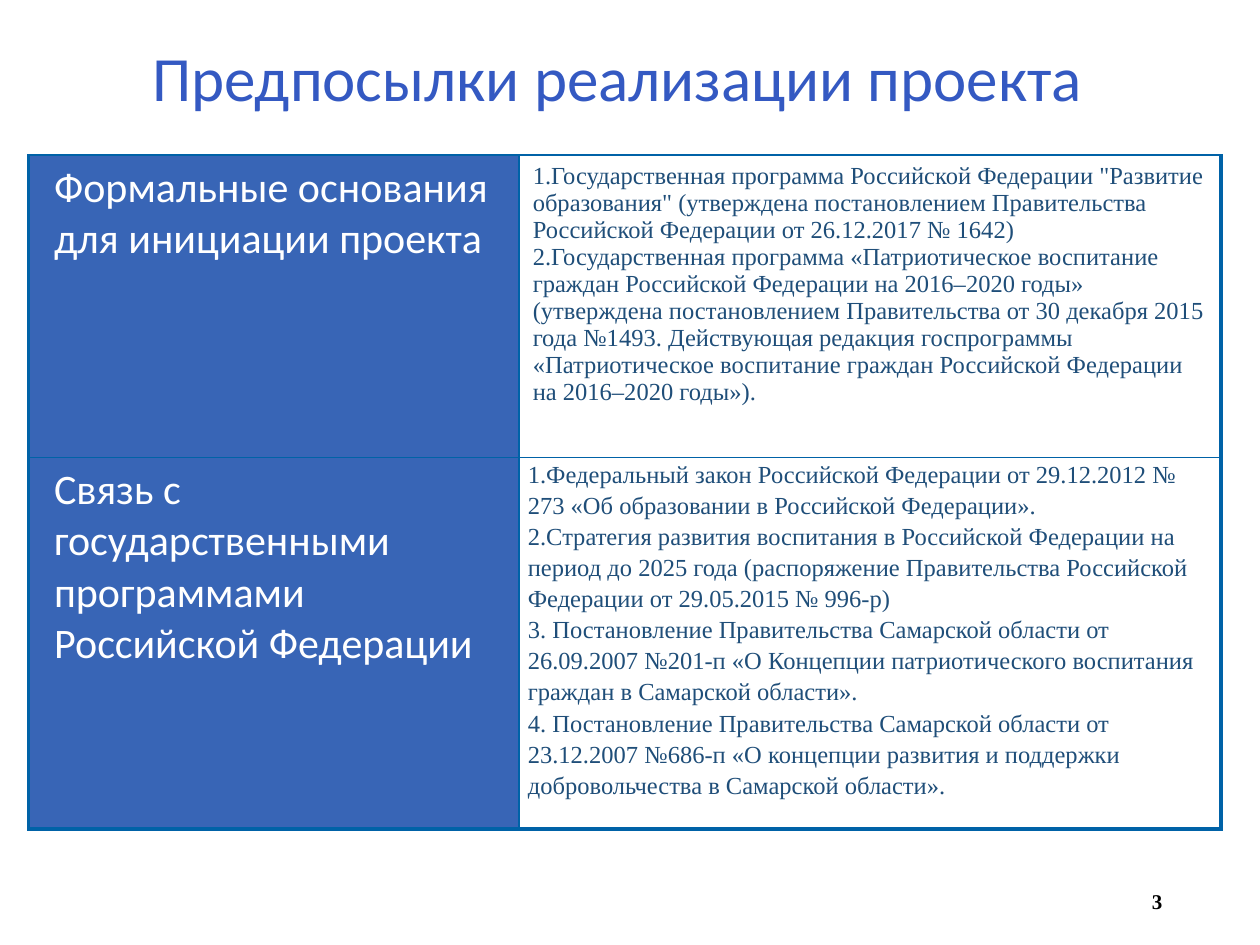
from lxml import etree
from pptx import Presentation
from pptx.dml.color import RGBColor
from pptx.enum.text import MSO_ANCHOR, PP_ALIGN
from pptx.oxml.ns import qn
from pptx.util import Cm, Pt

LEFT, RIGHT = PP_ALIGN.LEFT, PP_ALIGN.RIGHT
TOP, MIDDLE, BOTTOM = MSO_ANCHOR.TOP, MSO_ANCHOR.MIDDLE, MSO_ANCHOR.BOTTOM
BLACK = RGBColor(0x00, 0x00, 0x00)
WHITE = RGBColor(0xFF, 0xFF, 0xFF)
BLUE = RGBColor(0x38, 0x65, 0xB6)
EDGE = RGBColor(0x00, 0x62, 0xA7)
NAVY = RGBColor(0x1F, 0x4E, 0x79)
TITLE = RGBColor(0x34, 0x59, 0xC2)
SANS, SERIF = "Calibri", "Times New Roman"
THIN, THICK = Pt(1), Pt(2.25)

HEAD = {"font": {"name": SANS, "size": Pt(36), "bold": False}, "color": TITLE,
        "para": {"alignment": LEFT, "line_spacing": 0.9}}
PAGE = {"font": {"name": SERIF, "size": Pt(12), "bold": True}, "color": BLACK,
        "para": {"alignment": RIGHT}}
LABEL = {"font": {"name": SANS, "size": Pt(24), "bold": False}, "color": WHITE,
         "para": {"alignment": LEFT, "space_before": Pt(6)},
         "fill": BLUE, "pad": (0.51, 0.15, 0.28, 0.15)}
BODY = {"font": {"name": SERIF, "size": Pt(14), "bold": False}, "color": NAVY,
        "para": {"alignment": LEFT},
        "fill": WHITE, "pad": (0.28, 0.15, 0.28, 0.15)}
DENSE = {**BODY, "para": {"alignment": LEFT, "line_spacing": 1.15},
         "pad": (0.18, 0, 0.18, 0)}

BASIS = [
    "1.Государственная программа Российской Федерации \"Развитие образования\" "
    "(утверждена постановлением Правительства Российской Федерации от 26.12.2017 № 1642)",
    "2.Государственная программа «Патриотическое воспитание граждан Российской Федерации "
    "на 2016–2020 годы» (утверждена постановлением Правительства от 30 декабря 2015 года "
    "№1493. Действующая редакция госпрограммы «Патриотическое воспитание граждан "
    "Российской Федерации на 2016–2020 годы»).",
]
LINKS = [
    "1.Федеральный закон Российской Федерации от 29.12.2012 № 273 "
    "«Об образовании в Российской Федерации».",
    "2.Стратегия развития воспитания в Российской Федерации на период до 2025 года "
    "(распоряжение Правительства Российской Федерации от 29.05.2015 № 996-р)",
    "3. Постановление Правительства Самарской области от 26.09.2007 №201-п "
    "«О Концепции патриотического воспитания граждан в Самарской области».",
    "4. Постановление Правительства Самарской области от 23.12.2007 №686-п "
    "«О концепции развития и поддержки добровольчества в Самарской области».",
]
ROWS = [
    [(["Формальные основания для инициации проекта"], LABEL), (BASIS, BODY)],
    [(["Связь с государственными программами Российской Федерации"], LABEL),
     (LINKS, DENSE)],
]


def apply(item, values):
    for name, value in values.items():
        setattr(item, name, value)


class Deck:
    def __init__(self, slide, edge):
        self.slide = slide
        self.edge = edge

    def lay(self, frame, lines, style):
        for i, line in enumerate(lines):
            para = frame.add_paragraph() if i else frame.paragraphs[0]
            apply(para, style["para"])
            run = para.add_run()
            run.text = line
            apply(run.font, style["font"])
            run.font.color.rgb = style["color"]

    def text(self, box, line, style, anchor):
        frame = self.slide.shapes.add_textbox(*map(Cm, box)).text_frame
        apply(frame, {"word_wrap": True, "vertical_anchor": anchor})
        self.lay(frame, [line], style)

    def border(self, cell, sides):
        props = cell._tc.get_or_add_tcPr()
        for side, width in sides.items():
            line = etree.SubElement(props, qn("a:ln" + side), w=str(width))
            fill = etree.SubElement(line, qn("a:solidFill"))
            etree.SubElement(fill, qn("a:srgbClr"), val=str(self.edge))

    def table(self, spot, wide, high, rows):
        box = (*spot, sum(wide), sum(high))
        grid = self.slide.shapes.add_table(len(high), len(wide), *map(Cm, box)).table
        apply(grid, {"first_row": False, "horz_banding": False})
        for col, size in zip(grid.columns, wide):
            col.width = Cm(size)
        for row, size in zip(grid.rows, high):
            row.height = Cm(size)
        for r, row in enumerate(rows):
            for c, (lines, style) in enumerate(row):
                cell = grid.cell(r, c)
                self.border(cell, {
                    "L": THIN if c else THICK,
                    "R": THICK if c == len(wide) - 1 else THIN,
                    "T": THIN,
                    "B": THICK if r == len(high) - 1 else THIN,
                })
                cell.fill.solid()
                cell.fill.fore_color.rgb = style["fill"]
                left, top, right, low = map(Cm, style["pad"])
                apply(cell, {"margin_left": left, "margin_top": top,
                             "margin_right": right, "margin_bottom": low,
                             "vertical_anchor": TOP})
                self.lay(cell.text_frame, lines, style)


def main():
    show = Presentation()
    apply(show, {"slide_width": Cm(25.4), "slide_height": Cm(19.05)})
    deck = Deck(show.slides.add_slide(show.slide_layouts[6]), EDGE)
    deck.text((17.96, 17.65, 5.72, 1.02), "3", PAGE, MIDDLE)
    deck.table((0.58, 3.12), (9.88, 14.15), (6.1, 6.81), ROWS)
    deck.text((2.82, 1.07, 22, 1.37), "Предпосылки реализации проекта", HEAD, BOTTOM)
    show.save("out.pptx")


if __name__ == "__main__":
    main()
